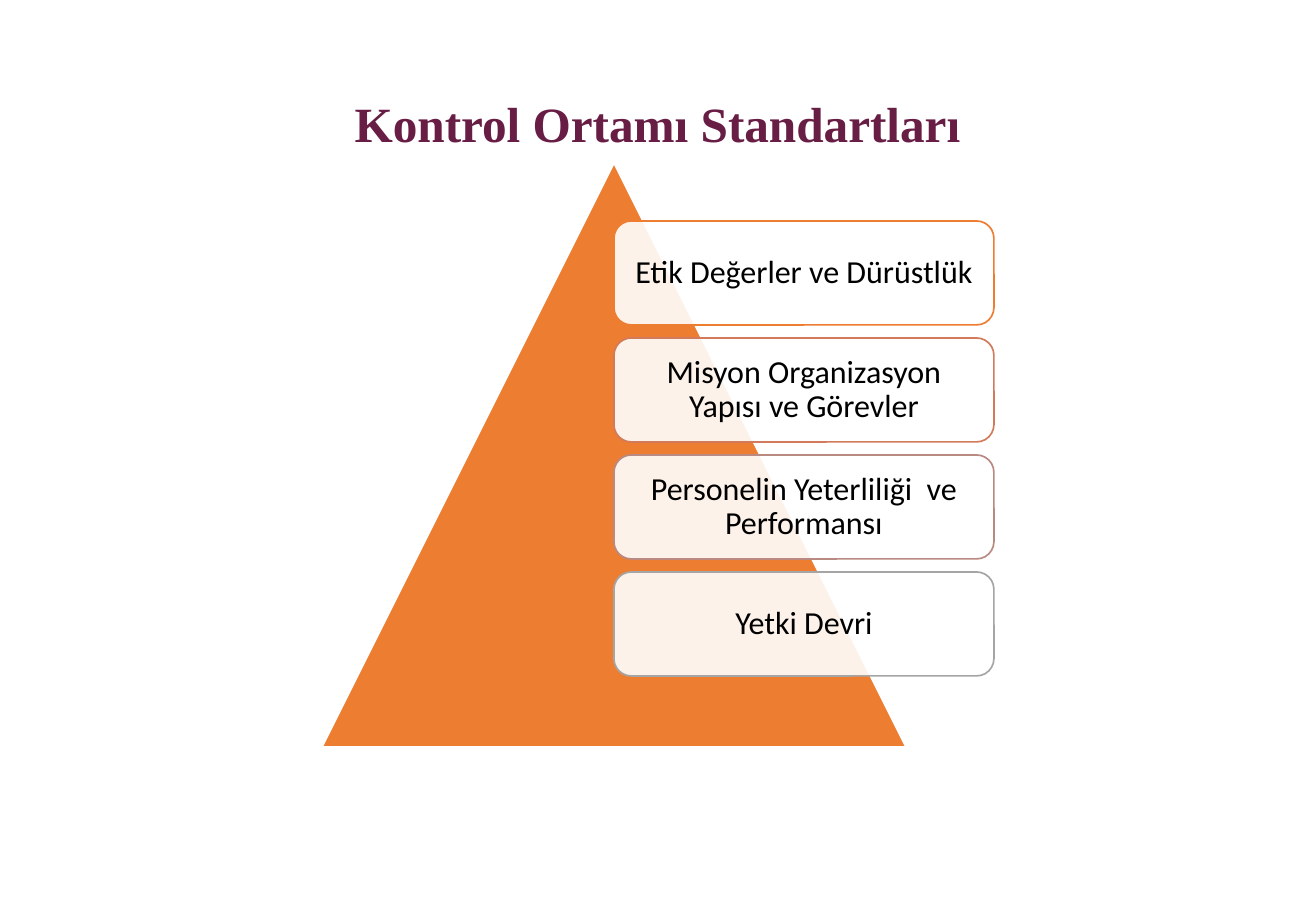
from typing import NamedTuple

from lxml.etree import SubElement
from pptx import Presentation
from pptx.dml.color import RGBColor
from pptx.enum.shapes import MSO_SHAPE
from pptx.enum.text import MSO_ANCHOR, PP_ALIGN
from pptx.oxml.ns import qn
from pptx.util import Emu, Pt

EMU_PER_PX = 7526
SLIDE_WIDTH, SLIDE_HEIGHT = 1316, 911
TRIANGLE_LEFT, TRIANGLE_TOP, TRIANGLE_SIZE = 322, 163, 584
CARD_LEFT = TRIANGLE_LEFT + TRIANGLE_SIZE // 2
CARD_TOP, CARD_WIDTH, CARD_HEIGHT, CARD_GAP = 221, 380, 104, 13
CARD_MARGIN = 9
CARD_OPACITY = 90


class Standard(NamedTuple):
    text: str
    outline: str


STANDARDS = [
    Standard("Etik Değerler ve Dürüstlük", "ED7D31"),
    Standard("Misyon Organizasyon Yapısı ve Görevler", "D17B5C"),
    Standard("Personelin Yeterliliği  ve Performansı", "B98A82"),
    Standard("Yetki Devri", "A5A5A5"),
]


def px(length: int) -> Emu:
    return Emu(length * EMU_PER_PX)


def color(value: str) -> RGBColor:
    return RGBColor.from_string(value)


def add_filled_shape(slide, kind, left: int, top: int, width: int, height: int,
                     fill: str, outline: str):
    shape = slide.shapes.add_shape(kind, px(left), px(top), px(width), px(height))
    shape.shadow.inherit = False
    shape.fill.solid()
    shape.fill.fore_color.rgb = color(fill)
    shape.line.color.rgb = color(outline)
    shape.line.width = Pt(1)
    return shape


def set_opacity(shape, percent: int) -> None:
    fill_color = shape.fill._xPr.find(qn("a:solidFill"))[0]
    SubElement(fill_color, qn("a:alpha")).set("val", str(percent * 1000))


def write_text(shape, text: str, font_name: str, size: float, font_color: str,
               bold: bool = False) -> None:
    text_frame = shape.text_frame
    text_frame.text = text
    text_frame.word_wrap = True
    text_frame.vertical_anchor = MSO_ANCHOR.MIDDLE
    paragraph = text_frame.paragraphs[0]
    paragraph.alignment = PP_ALIGN.CENTER
    paragraph.line_spacing = 0.9
    font = paragraph.runs[0].font
    font.name, font.size, font.bold = font_name, Pt(size), bold
    font.color.rgb = color(font_color)


def add_card(slide, standard: Standard, top: int) -> None:
    card = add_filled_shape(slide, MSO_SHAPE.ROUNDED_RECTANGLE, CARD_LEFT, top,
                            CARD_WIDTH, CARD_HEIGHT, "FFFFFF", standard.outline)
    set_opacity(card, CARD_OPACITY)
    text_frame = card.text_frame
    text_frame.margin_left = text_frame.margin_right = px(CARD_MARGIN)
    text_frame.margin_top = text_frame.margin_bottom = px(CARD_MARGIN)
    write_text(card, standard.text, "Calibri", 19, "000000")


def main() -> None:
    presentation = Presentation()
    presentation.slide_width = px(SLIDE_WIDTH)
    presentation.slide_height = px(SLIDE_HEIGHT)
    slide = presentation.slides.add_slide(presentation.slide_layouts[6])

    # Pyramid behind the cards
    add_filled_shape(slide, MSO_SHAPE.ISOSCELES_TRIANGLE, TRIANGLE_LEFT, TRIANGLE_TOP,
                     TRIANGLE_SIZE, TRIANGLE_SIZE, "ED7D31", "FFFFFF")

    # One card per standard
    for index, standard in enumerate(STANDARDS):
        add_card(slide, standard, CARD_TOP + index * (CARD_HEIGHT + CARD_GAP))

    # Title
    title = slide.shapes.add_textbox(px(90), px(89), px(1135), px(74))
    write_text(title, "Kontrol Ortamı Standartları", "Times New Roman", 29.2, "681D44",
               bold=True)

    presentation.save("out.pptx")


if __name__ == "__main__":
    main()
